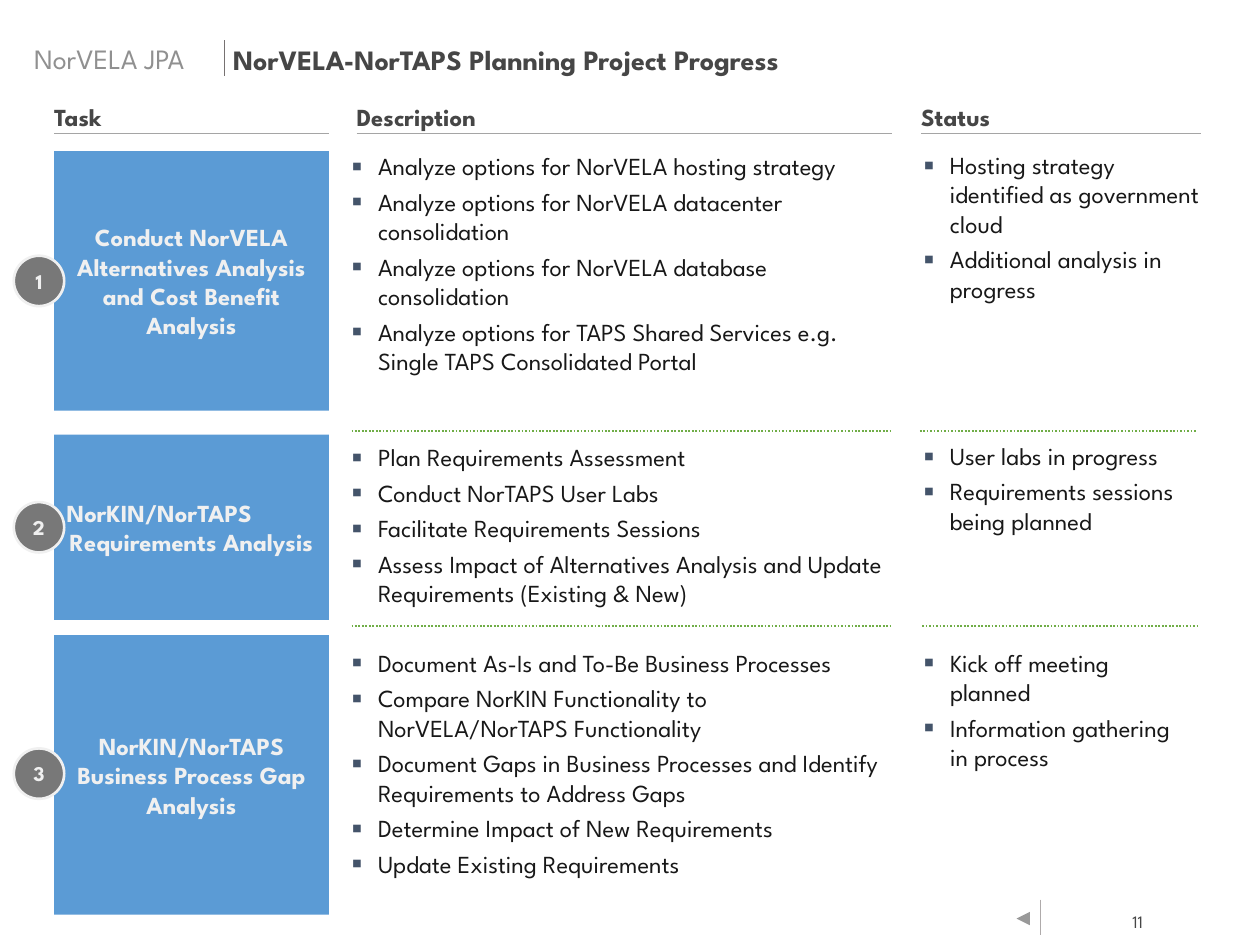
from lxml import etree
from pptx import Presentation
from pptx.dml.color import RGBColor
from pptx.enum import dml, shapes, text
from pptx.oxml import ns
from pptx.util import Inches, Pt

FONT = "League Spartan"
WHITE = RGBColor(0xFF, 0xFF, 0xFF)
PALE = RGBColor(0xF0, 0xF0, 0xF0)
BLUE = RGBColor(0x5B, 0x9B, 0xD5)
GREEN = RGBColor(0x70, 0xAD, 0x47)
DARK = RGBColor(0x46, 0x46, 0x46)
INK = RGBColor(0x18, 0x18, 0x18)
GRAY = RGBColor(0x78, 0x78, 0x78)
SOFT = RGBColor(0x90, 0x90, 0x90)
RULE = RGBColor(0xA5, 0xA5, 0xA5)
SLATE = RGBColor(0x76, 0x71, 0x71)
SILVER = RGBColor(0xAF, 0xAB, 0xAB)
NAVY = "44546A"

LEFT, CENTER, RIGHT = text.PP_ALIGN.LEFT, text.PP_ALIGN.CENTER, text.PP_ALIGN.RIGHT
TOP, MIDDLE, BOTTOM = text.MSO_ANCHOR.TOP, text.MSO_ANCHOR.MIDDLE, text.MSO_ANCHOR.BOTTOM

deck = Presentation()
deck.slide_width, deck.slide_height = Inches(10), Inches(7.5)
slide = deck.slides.add_slide(deck.slide_layouts[5])


def write(shape, lines, size, color, bold=False, align=LEFT, anchor=TOP,
          pad=(0, 0, 0, 0), wrap=True, bullet=False):
    """Fill a shape with paragraphs; pad is left, top, right, bottom in inches."""
    frame = shape.text_frame
    frame.word_wrap = wrap
    frame.vertical_anchor = anchor
    frame.margin_left, frame.margin_top, frame.margin_right, frame.margin_bottom = map(Inches, pad)
    frame.text = "\n".join(lines)
    for par in frame.paragraphs:
        par.alignment = align
        if bullet:
            par.space_before = Pt(size / 4)
            props = par._p.get_or_add_pPr()
            props.set("marL", str(Inches(0.21)))
            props.set("indent", str(Inches(-0.21)))
            hue = etree.SubElement(props, ns.qn("a:buClr"))
            etree.SubElement(hue, ns.qn("a:srgbClr"), val=NAVY)
            etree.SubElement(props, ns.qn("a:buSzPct"), val="125000")
            etree.SubElement(props, ns.qn("a:buFont"), typeface="Arial")
            etree.SubElement(props, ns.qn("a:buChar"), char="▪")
        font = par.font
        font.name, font.size, font.bold = FONT, Pt(size), bold
        font.color.rgb = color
    return frame


def rule(x1, y1, x2, y2, color, width, dash=None):
    line = slide.shapes.add_connector(
        shapes.MSO_CONNECTOR.STRAIGHT, Inches(x1), Inches(y1), Inches(x2), Inches(y2))
    line.line.color.rgb = color
    line.line.width = Pt(width)
    if dash:
        line.line.dash_style = dash
    etree.SubElement(line._element.spPr, ns.qn("a:effectLst"))


# Header
brand = slide.shapes.add_textbox(Inches(0.27), Inches(0.28), Inches(1.45), Inches(0.37))
write(brand, ["NorVELA JPA"], 16, SOFT, anchor=MIDDLE, pad=(0, 0.05, 0, 0.05))
rule(1.78, 0.32, 1.78, 0.6, SLATE, 0.5)

title = slide.shapes.title
title.left, title.top, title.width, title.height = map(Inches, (1.85, 0.3, 7.31, 0.37))
frame = write(title, ["NorVELA-NorTAPS Planning Project Progress"], 16, DARK, True,
              anchor=MIDDLE, pad=(0, 0.05, 0, 0.05))
frame.auto_size = text.MSO_AUTO_SIZE.NONE
frame.paragraphs[0].line_spacing = 0.9

# Column heads
for name, x, width in (("Task", 0.43, 2.18), ("Description", 2.83, 4.25), ("Status", 7.31, 2.22)):
    rule(x, 1.06, x + width, 1.06, RULE, 0.75)
    head = slide.shapes.add_textbox(Inches(x), Inches(0.8), Inches(width), Inches(0.26))
    write(head, [name], 14, DARK, True, anchor=BOTTOM, pad=(0, 0, 0, 0.02))

# Rows: task box top and height, task, description top and points, status top and points
rows = [
    (1.2, 2.06, ["Conduct NorVELA Alternatives Analysis and Cost Benefit Analysis"],
     1.2, ["Analyze options for NorVELA hosting strategy",
           "Analyze options for NorVELA datacenter consolidation",
           "Analyze options for NorVELA database consolidation",
           "Analyze options for TAPS Shared Services e.g. Single TAPS Consolidated Portal"],
     1.19, ["Hosting strategy identified as government cloud",
            "Additional analysis in progress"]),
    (3.45, 1.47, ["NorKIN/NorTAPS", "Requirements Analysis"],
     3.51, ["Plan Requirements Assessment",
            "Conduct NorTAPS User Labs",
            "Facilitate Requirements Sessions",
            "Assess Impact of Alternatives Analysis and Update Requirements (Existing & New)"],
     3.5, ["User labs in progress", "Requirements sessions being planned"]),
    (5.04, 2.22, ["NorKIN/NorTAPS", "Business Process Gap Analysis"],
     5.14, ["Document As-Is and To-Be Business Processes",
            "Compare NorKIN Functionality to NorVELA/NorTAPS Functionality",
            "Document Gaps in Business Processes and Identify Requirements to Address Gaps",
            "Determine Impact of New Requirements",
            "Update Existing Requirements"],
     5.14, ["Kick off meeting planned", "Information gathering in process"]),
]
for i, (top, height, task, about, points, state, news) in enumerate(rows):
    box = slide.shapes.add_shape(
        shapes.MSO_SHAPE.RECTANGLE, Inches(0.43), Inches(top), Inches(2.18), Inches(height))
    box.shadow.inherit = False
    box.fill.solid()
    box.fill.fore_color.rgb = BLUE
    box.line.fill.background()
    frame = write(box, task, 14, PALE, True, CENTER, MIDDLE, (0.1, 0.05, 0.1, 0.05))
    if i == 1:
        frame.paragraphs[0].alignment = LEFT

    dot = slide.shapes.add_shape(
        shapes.MSO_SHAPE.OVAL, Inches(0.11), Inches(2.03 + 1.955 * i), Inches(0.4), Inches(0.4))
    dot.shadow.inherit = False
    dot.fill.solid()
    dot.fill.fore_color.rgb = GRAY
    dot.line.color.rgb = PALE
    dot.line.width = Pt(1.5)
    write(dot, [str(i + 1)], 12, PALE, True, CENTER, MIDDLE, wrap=False)

    last = i == len(rows) - 1
    for x, y, width, items in ((2.79, about, 4.29, points),
                               (7.33, state, 2.11 if last else 2.2, news)):
        cell = slide.shapes.add_textbox(Inches(x), Inches(y), Inches(width), Inches(height))
        write(cell, items, 14, INK, bullet=True)

# Dotted lines between rows
for y, x in ((3.42, 7.3), (4.97, 7.32)):
    for start, width in ((2.79, 4.29), (x, 2.2)):
        rule(start, y, start + width, y, GREEN, 1, dml.MSO_LINE.ROUND_DOT)

# Footer
back = slide.shapes.add_shape(
    shapes.MSO_SHAPE.ACTION_BUTTON_FORWARD_OR_NEXT,
    Inches(8.05), Inches(7.2), Inches(0.14), Inches(0.18))
back.rotation = 180
back.shadow.inherit = False
back.fill.solid()
back.fill.fore_color.rgb = WHITE
back.line.fill.background()
rule(8.26, 7.14, 8.26, 7.42, SILVER, 0.5)
page = slide.shapes.add_textbox(Inches(8.83), Inches(7.19), Inches(0.32), Inches(0.24))
write(page, ["11"], 10, DARK, align=RIGHT, pad=(0.08, 0.04, 0.08, 0.04), wrap=False)

deck.save("out.pptx")
